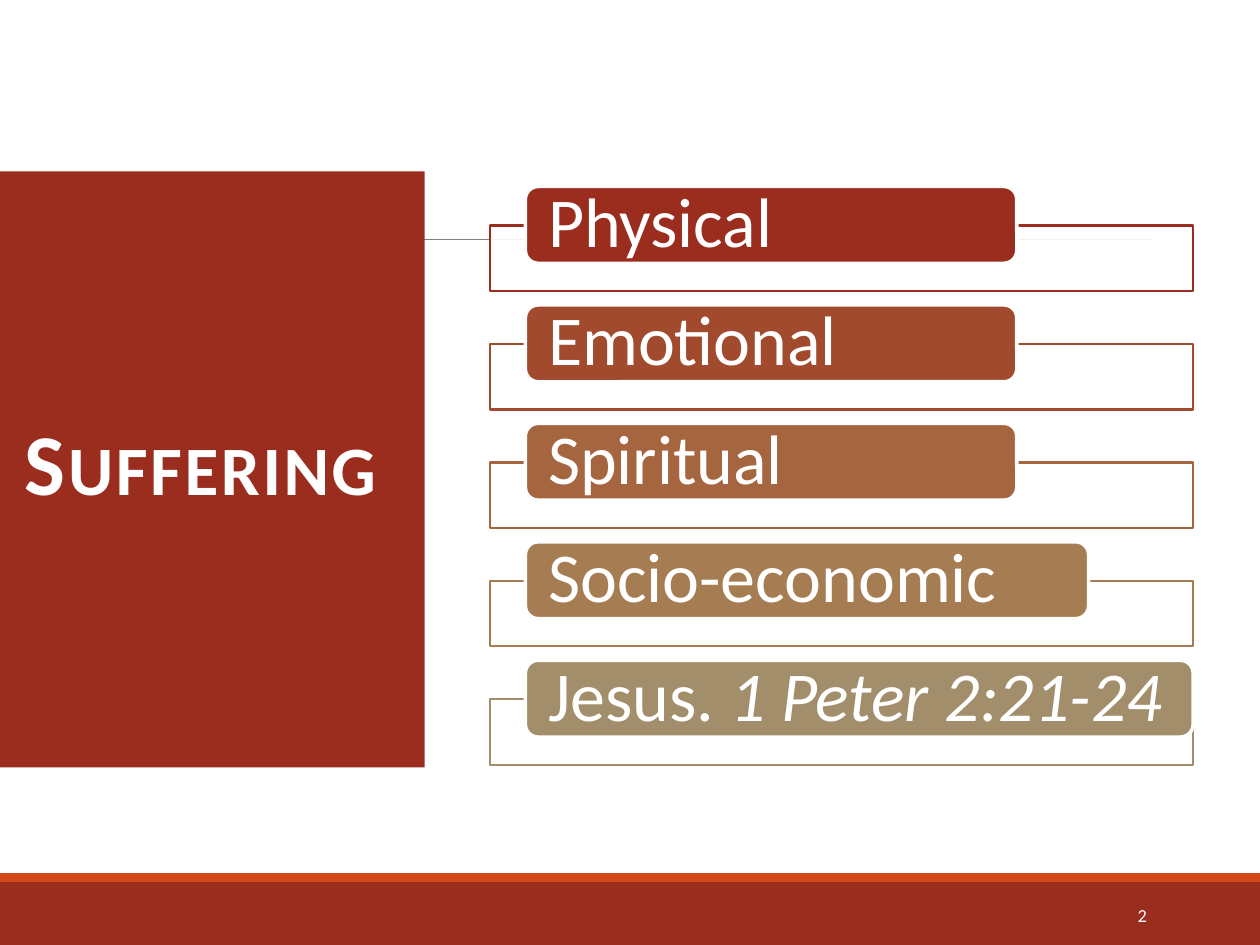
from pptx import Presentation
from pptx.dml.color import RGBColor
from pptx.enum.shapes import MSO_CONNECTOR, MSO_SHAPE
from pptx.enum.text import MSO_ANCHOR, MSO_AUTO_SIZE, PP_ALIGN
from pptx.oxml.ns import qn
from pptx.util import Inches, Pt
from lxml.etree import SubElement

FONT = "Calibri"
WHITE = RGBColor(0xFF, 0xFF, 0xFF)
RED = RGBColor(0x9B, 0x2D, 0x1F)
ORANGE = RGBColor(0xD3, 0x48, 0x17)
GRAY = RGBColor(0x80, 0x80, 0x80)

# Content: text runs as (text, italic), label width, colour
TITLE = "Suffering"
PAGE_NUMBER = "2"
ITEMS = [
    ([("Physical", False)], 3.9, RED),
    ([("Emotional", False)], 3.9, RGBColor(0xA1, 0x4A, 0x2E)),
    ([("Spiritual", False)], 3.9, RGBColor(0xA4, 0x65, 0x3F)),
    ([("Socio-economic", False)], 4.47, RGBColor(0xA6, 0x7D, 0x52)),
    ([("Jesus. ", False), ("1 Peter 2:21-24", True)], 5.3, RGBColor(0xA2, 0x8E, 0x6A)),
]

# Grid of the list, in inches
FRAME_LEFT, FRAME_TOP, FRAME_WIDTH, FRAME_HEIGHT = 3.89, 1.79, 5.58, 0.52
ROW_PITCH = 0.94
LABEL_INDENT, LABEL_RISE, LABEL_HEIGHT = 0.28, 0.31, 0.61


def add_box(slide, kind, left, top, width, height, fill, line=None, line_width=1):
    shape = slide.shapes.add_shape(
        kind, Inches(left), Inches(top), Inches(width), Inches(height))
    shape.shadow.inherit = False
    shape.fill.solid()
    shape.fill.fore_color.rgb = fill
    if line is None:
        shape.line.fill.background()
    else:
        shape.line.color.rgb = line
        shape.line.width = Pt(line_width)
    return shape


def write_text(shape, runs, size, align=PP_ALIGN.LEFT, bold=False, spacing=1.0, insets=None):
    frame = shape.text_frame
    frame.word_wrap = True
    frame.auto_size = MSO_AUTO_SIZE.NONE
    frame.vertical_anchor = MSO_ANCHOR.MIDDLE
    if insets:
        (frame.margin_left, frame.margin_top,
         frame.margin_right, frame.margin_bottom) = map(Inches, insets)
    paragraph = frame.paragraphs[0]
    paragraph.alignment = align
    paragraph.line_spacing = spacing
    for text, italic in runs:
        run = paragraph.add_run()
        run.text = text
        run.font.name = FONT
        run.font.size = Pt(size)
        run.font.bold = bold
        run.font.italic = italic
        run.font.color.rgb = WHITE
    return paragraph


presentation = Presentation()
presentation.slide_width = Inches(10)
presentation.slide_height = Inches(7.5)
slide = presentation.slides.add_slide(presentation.slide_layouts[5])

# Footer bands and thin rule
add_box(slide, MSO_SHAPE.RECTANGLE, 0, 7, 10, 0.5, RED)
add_box(slide, MSO_SHAPE.RECTANGLE, 0, 6.93, 10, 0.07, ORANGE)
rule = slide.shapes.add_connector(
    MSO_CONNECTOR.STRAIGHT, Inches(0.98), Inches(1.9), Inches(9.15), Inches(1.9))
rule.line.color.rgb = GRAY
rule.line.width = Pt(0.5)
SubElement(rule._element.spPr, qn("a:effectLst"))

# Title panel, brought in front of the rule
title = slide.shapes.title
title.left, title.top, title.width, title.height = map(Inches, (0, 1.36, 3.37, 4.73))
title.fill.solid()
title.fill.fore_color.rgb = RED
heading = write_text(title, [(TITLE, False)], 49.5, align=PP_ALIGN.CENTER,
                     bold=True, spacing=0.85)
heading_format = heading.runs[0].font._element
heading_format.set("cap", "small")
heading_format.set("spc", "150")
slide.shapes._spTree.append(title._element)

# List: outlined frame with a label over its top edge
for row, (runs, label_width, color) in enumerate(ITEMS):
    top = FRAME_TOP + row * ROW_PITCH
    frame_box = add_box(slide, MSO_SHAPE.RECTANGLE, FRAME_LEFT, top, FRAME_WIDTH,
                        FRAME_HEIGHT, WHITE, line=color, line_width=1.25)
    fill_color = frame_box._element.spPr.find(qn("a:solidFill"))[0]
    SubElement(fill_color, qn("a:alpha"), val="90000")
    label = add_box(slide, MSO_SHAPE.ROUNDED_RECTANGLE, FRAME_LEFT + LABEL_INDENT,
                    top - LABEL_RISE, label_width, LABEL_HEIGHT, color,
                    line=WHITE, line_width=2)
    write_text(label, runs, 40, spacing=0.9, insets=(0.15, 0, 0.1, 0))

# Page number
number = slide.shapes.add_textbox(Inches(8.12), Inches(7.06), Inches(1.08), Inches(0.4))
write_text(number, [(PAGE_NUMBER, False)], 10.5, align=PP_ALIGN.RIGHT)

presentation.save("out.pptx")
